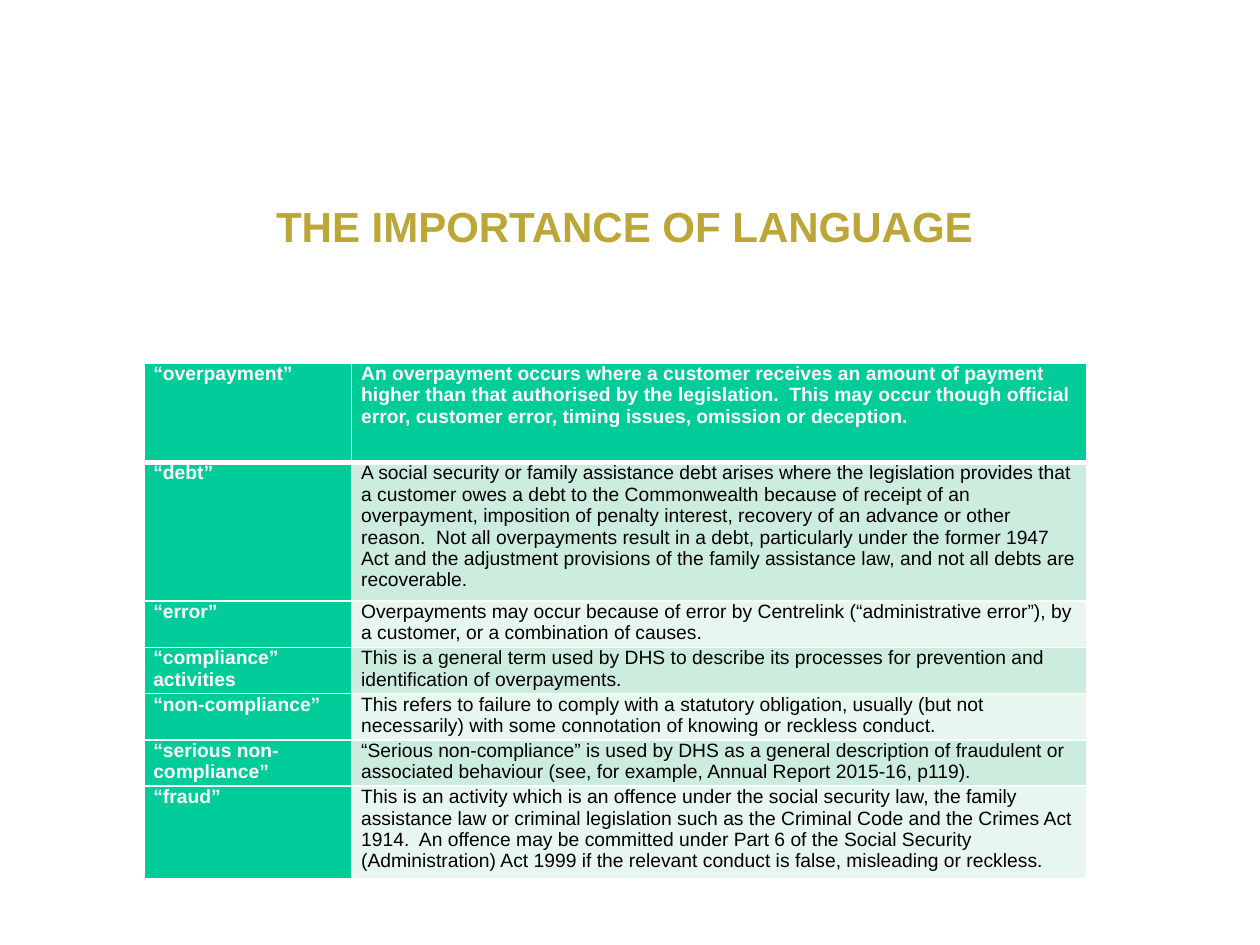
import pptx
import pptx.dml.color
import pptx.enum.text
import pptx.oxml.ns
import pptx.util
from lxml import etree

Cm = pptx.util.Cm
Pt = pptx.util.Pt
RGBColor = pptx.dml.color.RGBColor

GOLD = RGBColor(0xBC, 0xA6, 0x38)
GREEN = RGBColor(0x00, 0xCC, 0x99)
MINT = RGBColor(0xCC, 0xEC, 0xDE)
PALE_MINT = RGBColor(0xE7, 0xF6, 0xEF)
WHITE = RGBColor(0xFF, 0xFF, 0xFF)
BLACK = RGBColor(0x00, 0x00, 0x00)

COLUMN_WIDTHS = (4.19, 14.81)
DEFINITIONS = (
    (2.0, "“overpayment”",
     "An overpayment occurs where a customer receives an amount of payment higher than that "
     "authorised by the legislation.  This may occur though official error, customer error, "
     "timing issues, omission or deception."),
    (2.79, "“debt”",
     "A social security or family assistance debt arises where the legislation provides that a "
     "customer owes a debt to the Commonwealth because of receipt of an overpayment, imposition "
     "of penalty interest, recovery of an advance or other reason.  Not all overpayments result "
     "in a debt, particularly under the former 1947 Act and the adjustment provisions of the "
     "family assistance law, and not all debts are recoverable."),
    (0.93, "“error”",
     "Overpayments may occur because of error by Centrelink (“administrative error”), by a "
     "customer, or a combination of causes."),
    (0.93, "“compliance” activities",
     "This is a general term used by DHS to describe its processes for prevention and "
     "identification of overpayments."),
    (0.93, "“non-compliance”",
     "This refers to failure to comply with a statutory obligation, usually (but not "
     "necessarily) with some connotation of knowing or reckless conduct."),
    (0.93, "“serious non-compliance”",
     "“Serious non-compliance” is used by DHS as a general description of fraudulent or "
     "associated behaviour (see, for example, Annual Report 2015-16, p119)."),
    (1.85, "“fraud”",
     "This is an activity which is an offence under the social security law, the family "
     "assistance law or criminal legislation such as the Criminal Code and the Crimes Act 1914.  "
     "An offence may be committed under Part 6 of the Social Security (Administration) Act 1999 "
     "if the relevant conduct is false, misleading or reckless."),
)


def add_run(paragraph, text, size, color, bold):
    """Add one Arial run to the paragraph."""
    run = paragraph.add_run()
    run.text = text
    run.font.name = "Arial"
    run.font.size = Pt(size)
    run.font.bold = bold
    run.font.color.rgb = color


def add_border(cell, side, width):
    """Give one side of the cell a white line."""
    qn = pptx.oxml.ns.qn
    properties = cell._tc.get_or_add_tcPr()
    line = etree.SubElement(properties, qn(f"a:ln{side}"), w=str(Pt(width)))
    fill = etree.SubElement(line, qn("a:solidFill"))
    etree.SubElement(fill, qn("a:srgbClr"), val=str(WHITE))


def add_title(slide, left, top, width, height):
    """Place the centred heading in its box."""
    shape = slide.shapes.add_textbox(left, top, width, height)
    frame = shape.text_frame
    frame.word_wrap = True
    frame.vertical_anchor = pptx.enum.text.MSO_ANCHOR.MIDDLE
    paragraph = frame.paragraphs[0]
    paragraph.alignment = pptx.enum.text.PP_ALIGN.CENTER
    add_run(paragraph, "THE IMPORTANCE OF LANGUAGE", 24, GOLD, True)


def fill_cell(cell, text, row, column):
    """Write and style a cell according to its place in the table."""
    highlighted = row == 0 or column == 0
    borders = {"L": 1, "R": 1, "T": 3 if row == 1 else 1, "B": 3 if row == 0 else 1}
    for side, width in borders.items():
        add_border(cell, side, width)
    cell.fill.solid()
    cell.fill.fore_color.rgb = GREEN if highlighted else (PALE_MINT, MINT)[row % 2]
    cell.margin_left = cell.margin_right = Cm(0.19)
    cell.margin_top = cell.margin_bottom = Cm(0)
    add_run(cell.text_frame.paragraphs[0], text, 11, WHITE if highlighted else BLACK, highlighted)


def add_definitions(slide, left, top, width, height):
    """Place the table of terms and their meanings in its box."""
    shape = slide.shapes.add_table(
        len(DEFINITIONS), len(COLUMN_WIDTHS), left, top, width, height)
    table = shape.table
    for column, column_width in zip(table.columns, COLUMN_WIDTHS):
        column.width = Cm(column_width)
    for row, (row_height, *texts) in enumerate(DEFINITIONS):
        table.rows[row].height = Cm(row_height)
        for column, text in enumerate(texts):
            fill_cell(table.cell(row, column), text, row, column)


def main():
    """Build and save the presentation."""
    presentation = pptx.Presentation()
    presentation.slide_width = Cm(25.4)
    presentation.slide_height = Cm(19.05)
    slide = presentation.slides.add_slide(presentation.slide_layouts[6])
    add_title(slide, Cm(0.84), Cm(3.61), Cm(23.5), Cm(1.9))
    table_height = sum(row[0] for row in DEFINITIONS)
    add_definitions(slide, Cm(2.9), Cm(7.32), Cm(sum(COLUMN_WIDTHS)), Cm(table_height))
    presentation.save("out.pptx")


if __name__ == "__main__":
    main()
